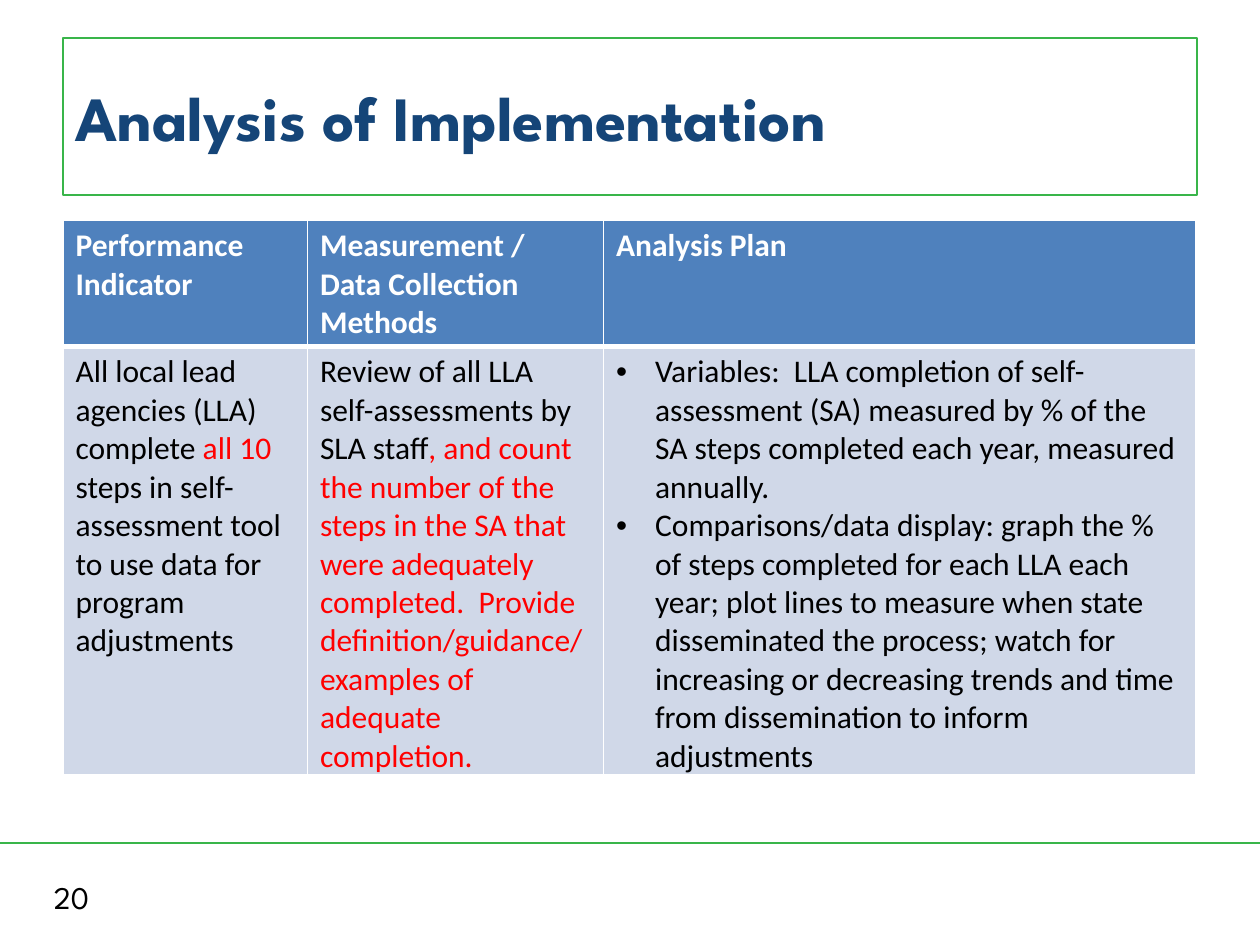
from pptx import Presentation
from pptx import util as u
from pptx.dml.color import RGBColor
from pptx.enum import shapes, text
from pptx.oxml import parse_xml
from pptx.oxml.ns import nsdecls, qn

HUES = {"green": "39B54A", "navy": "154578", "blue": "4F81BD", "pale": "D0D8E8",
        "white": "FFFFFF", "black": "000000", "red": "FF0000"}
HEAD = "League Spartan"
BODY = "Calibri"
WIDTHS = (1.94, 2.35, 4.7)
HEIGHTS = (1, 3.4)

HEADERS = ("Performance Indicator", "Measurement / Data Collection Methods", "Analysis Plan")
GOAL = [("All local lead agencies (LLA) complete ", "black"),
        ("all 10 ", "red"),
        ("steps in self-assessment tool to use data for program adjustments", "black")]
METHOD = [("Review of all LLA self-assessments by SLA staff", "black"),
          (", and count the number of the steps in the SA that were adequately completed.  "
           "Provide definition/guidance/examples of adequate completion.", "red")]
PLAN = [
    "Variables:  LLA completion of self-assessment (SA) measured by % of the SA steps "
    "completed each year, measured annually.",
    "Comparisons/data display: graph the % of steps completed for each LLA each year; plot "
    "lines to measure when state disseminated the process; watch for increasing or "
    "decreasing trends and time from dissemination to inform adjustments",
]


def color(name):
    return RGBColor.from_string(HUES[name])


def write(frame, paras, size=18, font=BODY, bold=False, bullet=False):
    """Fill a frame with paragraphs, each a list of (words, hue) runs."""
    frame.word_wrap = True
    for i, runs in enumerate(paras):
        para = frame.add_paragraph() if i else frame.paragraphs[0]
        para.alignment = text.PP_ALIGN.LEFT
        if bullet:
            props = para._p.get_or_add_pPr()
            props.set("marL", str(u.Inches(0.31)))
            props.set("indent", str(u.Inches(-0.31)))
            props.append(parse_xml(f'<a:buFont {nsdecls("a")} typeface="Arial"/>'))
            props.append(parse_xml(f'<a:buChar {nsdecls("a")} char="•"/>'))
        for words, hue in runs:
            run = para.add_run()
            run.text = words
            run.font.size = u.Pt(size)
            run.font.name = font
            run.font.bold = bold
            run.font.color.rgb = color(hue)


def edge(cell, **widths):
    """Draw white cell borders; sides are named L, R, T, B in points."""
    props = cell._tc.get_or_add_tcPr()
    for i, side in enumerate("LRTB"):
        width = u.Pt(widths.get(side, 1))
        props.insert(i, parse_xml(
            f'<a:ln{side} {nsdecls("a")} w="{width}"><a:solidFill>'
            f'<a:srgbClr val="{HUES["white"]}"/></a:solidFill></a:ln{side}>'))


def title(slide, x, y, w, h):
    box = slide.shapes.add_shape(shapes.MSO_SHAPE.RECTANGLE, *map(u.Inches, (x, y, w, h)))
    box.shadow.inherit = False
    box.fill.background()
    box.line.color.rgb = color("green")
    box.line.width = u.Pt(1)
    box.text_frame.vertical_anchor = text.MSO_ANCHOR.MIDDLE
    write(box.text_frame, [[("Analysis of Implementation", "navy")]],
          size=36, font=HEAD, bold=True)


def grid(slide, x, y, w, h):
    table = slide.shapes.add_table(2, 3, *map(u.Inches, (x, y, w, h))).table
    for col, width in zip(table.columns, WIDTHS):
        col.width = u.Inches(width)
    for row, height in zip(table.rows, HEIGHTS):
        row.height = u.Inches(height)
    bodies = ([GOAL], [METHOD], [[(item, "black")] for item in PLAN])
    for i, (name, body) in enumerate(zip(HEADERS, bodies)):
        top, low = table.cell(0, i), table.cell(1, i)
        for cell, hue in ((top, "blue"), (low, "pale")):
            cell.fill.solid()
            cell.fill.fore_color.rgb = color(hue)
        write(top.text_frame, [[(name, "white")]], bold=True)
        write(low.text_frame, body, bullet=body is bodies[2])
        edge(top, B=3)
        edge(low, T=3)


def footer(slide, x, y, w, h):
    """Draw the rule across the slide and the page number below it."""
    rule = slide.shapes.add_connector(shapes.MSO_CONNECTOR.STRAIGHT,
                                      *map(u.Inches, (x, y, x + w, y)))
    rule.line.color.rgb = color("green")
    rule.line.width = u.Pt(1.5)
    rule._element.spPr.append(rule._element.makeelement(qn("a:effectLst"), {}))
    page = slide.shapes.add_textbox(*map(u.Inches, (x + 0.33, y + 0.23, 2.33, h - 0.41)))
    write(page.text_frame, [[("20", "black")]], font=HEAD)


def main():
    deck = Presentation()
    deck.slide_width, deck.slide_height = u.Inches(10), u.Inches(7.5)
    slide = deck.slides.add_slide(deck.slide_layouts[6])
    footer(slide, 0, 6.69, 10, 0.81)
    title(slide, 0.5, 0.3, 9, 1.25)
    grid(slide, 0.5, 1.75, 9, 4.4)
    deck.save("out.pptx")


if __name__ == "__main__":
    main()
